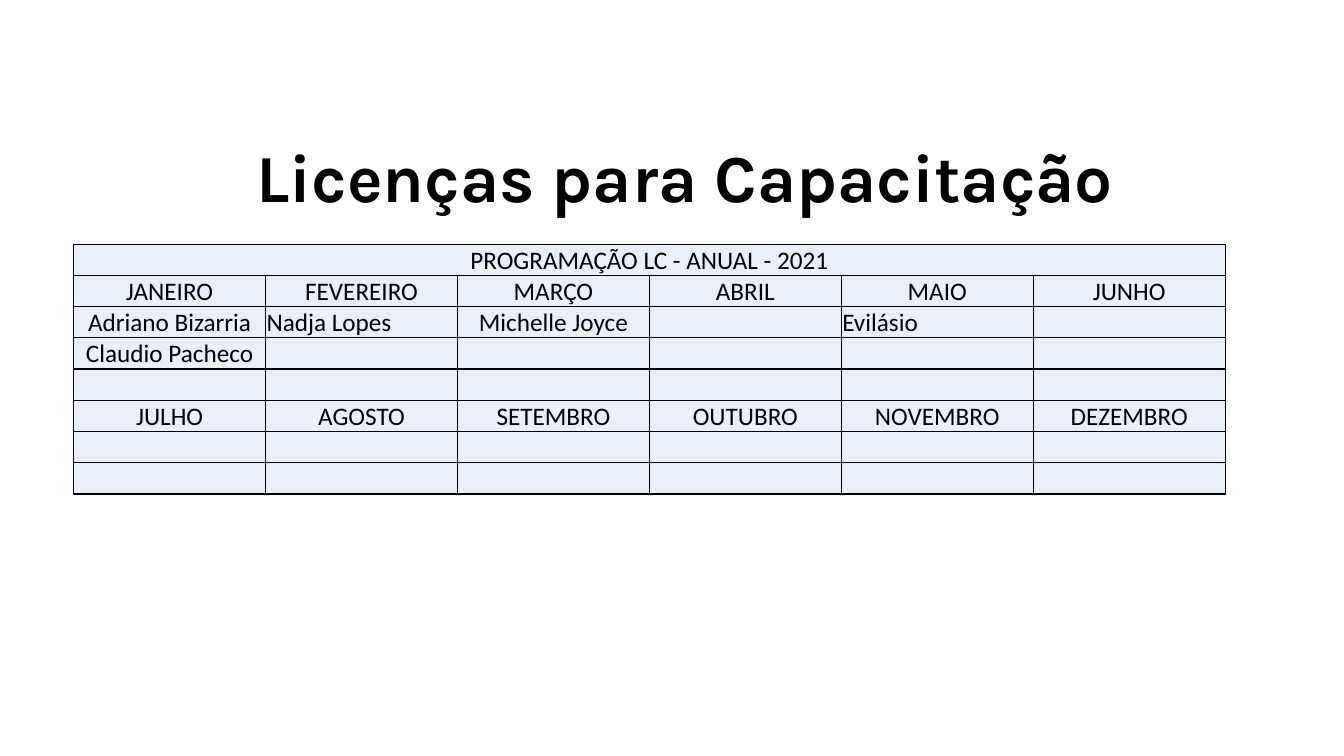
from dataclasses import dataclass

from lxml.etree import SubElement
from pptx import Presentation
from pptx.dml.color import RGBColor
from pptx.enum.text import MSO_ANCHOR as Anchor, MSO_AUTO_SIZE as AutoSize, PP_ALIGN as Align
from pptx.oxml.ns import qn
from pptx.util import Pt


@dataclass(frozen=True)
class Theme:
    ink: RGBColor = RGBColor(0x00, 0x00, 0x00)
    cell_fill: RGBColor = RGBColor(0xEA, 0xEF, 0xF7)
    title_font: str = "Karla"
    title_size: int = 48
    body_font: str = "Calibri"
    body_size: int = 18
    border: int = 1


THEME = Theme()
TITLE_BOX = (124.5, 93, 729.5, 65.5)
TABLE_BOX = (52.6, 174.4, 822.6, 178.4)

CAPTION = "PROGRAMAÇÃO LC - ANUAL - 2021"
COLUMNS = 6
ROWS = [
    ["JANEIRO", "FEVEREIRO", "MARÇO", "ABRIL", "MAIO", "JUNHO"],
    ["Adriano Bizarria", "Nadja Lopes", "Michelle Joyce", "", "Evilásio", ""],
    ["Claudio Pacheco"],
    [],
    ["JULHO", "AGOSTO", "SETEMBRO", "OUTUBRO", "NOVEMBRO", "DEZEMBRO"],
    [],
    [],
]
LEFT_ALIGNED = {"Nadja Lopes", "Evilásio"}


def style_font(font, name, size, bold=False):
    font.name, font.size, font.bold = name, Pt(size), bold
    font.color.rgb = THEME.ink


def add_title(page, box, text):
    title = page.shapes.title
    title.left, title.top, title.width, title.height = map(Pt, box)
    frame = title.text_frame
    frame.text = text
    frame.word_wrap = True
    frame.auto_size = AutoSize.SHAPE_TO_FIT_TEXT
    frame.vertical_anchor = Anchor.TOP
    para = frame.paragraphs[0]
    para.alignment = Align.CENTER
    para.line_spacing = 1.0
    style_font(para.runs[0].font, THEME.title_font, THEME.title_size, bold=True)


def add_borders(cell):
    properties = cell._tc.get_or_add_tcPr()
    for side in ("a:lnL", "a:lnR", "a:lnT", "a:lnB"):
        line = SubElement(properties, qn(side), w=str(Pt(THEME.border)))
        fill = SubElement(line, qn("a:solidFill"))
        SubElement(fill, qn("a:srgbClr"), val=str(THEME.ink))


def format_cell(cell, text):
    add_borders(cell)
    cell.fill.solid()
    cell.fill.fore_color.rgb = THEME.cell_fill
    cell.margin_left = cell.margin_right = cell.margin_top = Pt(0.7)
    cell.margin_bottom = 0
    cell.vertical_anchor = Anchor.MIDDLE
    cell.text_frame.text = text
    para = cell.text_frame.paragraphs[0]
    para.alignment = Align.LEFT if text in LEFT_ALIGNED else Align.CENTER
    style_font(para.font, THEME.body_font, THEME.body_size)
    for span in para.runs:
        style_font(span.font, THEME.body_font, THEME.body_size)


def add_schedule(page, box, caption, rows):
    left, top, width, height = box
    lines = [[caption], *rows]
    table = page.shapes.add_table(len(lines), COLUMNS, *map(Pt, box)).table
    table.first_row = table.horz_banding = False
    for column in table.columns:
        column.width = Pt(width / COLUMNS)
    for row, texts in zip(table.rows, lines):
        row.height = Pt(height / len(lines))
        padded = texts + [""] * (COLUMNS - len(texts))
        for cell, text in zip(row.cells, padded):
            format_cell(cell, text)
    # The caption spans the whole first row
    table.cell(0, 0).merge(table.cell(0, COLUMNS - 1))


def main():
    deck = Presentation()
    deck.slide_width, deck.slide_height = Pt(960), Pt(540)
    page = deck.slides.add_slide(deck.slide_layouts.get_by_name("Title Only"))
    # Heading
    add_title(page, TITLE_BOX, "Licenças para Capacitação")
    # Yearly schedule
    add_schedule(page, TABLE_BOX, CAPTION, ROWS)
    deck.save("out.pptx")


if __name__ == "__main__":
    main()
